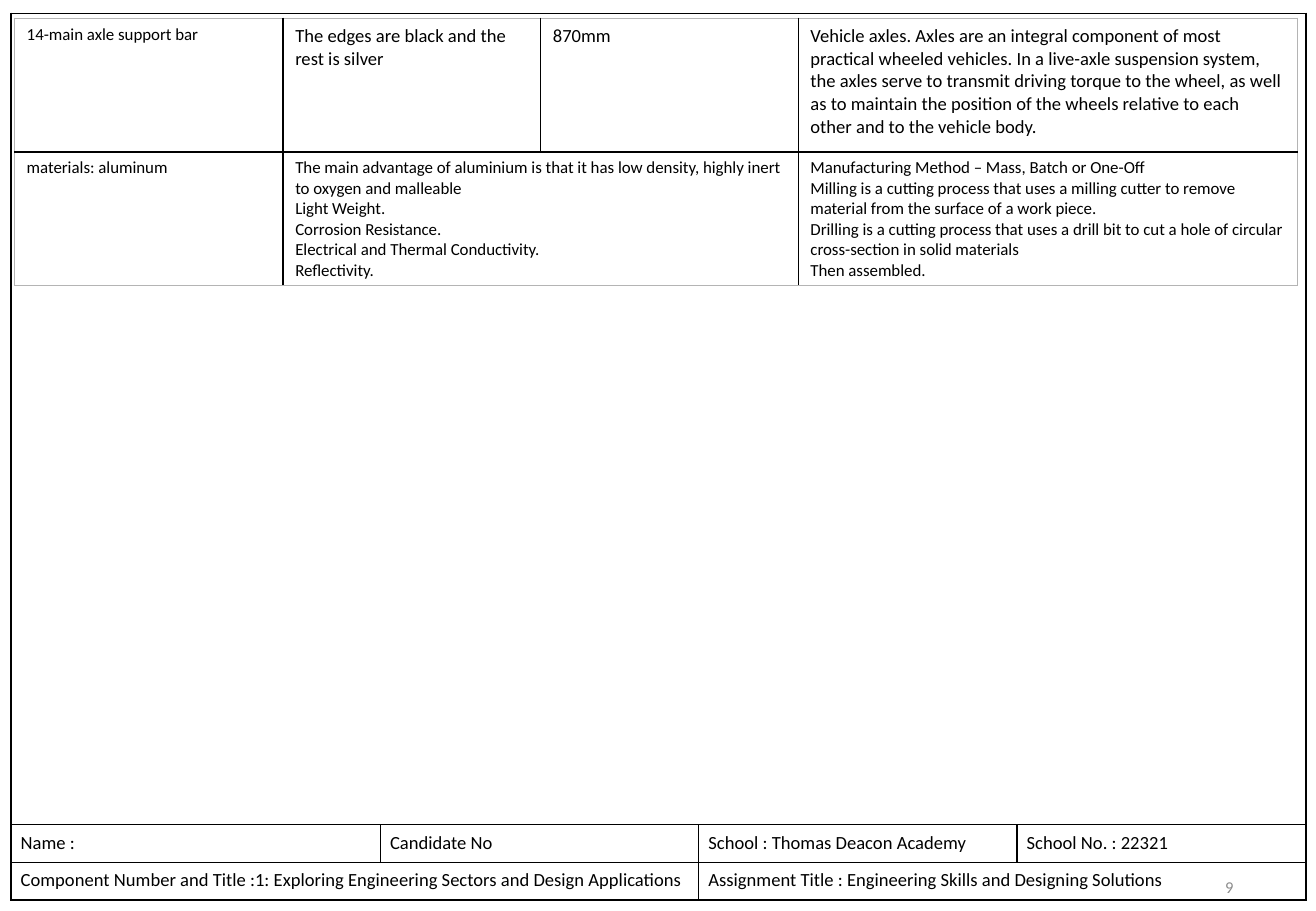
import lxml.etree
import pptx
import pptx.dml.color
import pptx.enum.text
import pptx.oxml.ns
import pptx.util

WIDTH, HEIGHT = 10.83, 7.5
BLACK, GREY, PAGE_GREY, WHITE = "000000", "B4B4B4", "8C8C8C", "FFFFFF"
MIDDLE = pptx.enum.text.MSO_ANCHOR.MIDDLE
TOP = pptx.enum.text.MSO_ANCHOR.TOP
RIGHT = pptx.enum.text.PP_ALIGN.RIGHT

FRAME_BOX = (0.09, 0.11, 10.65, 7.31)
FRAME_COLUMNS = (3.04, 2.62, 2.62, 2.38)
FRAME_ROWS = (6.68, 0.31, 0.31)
FRAME_CELLS = {
    (1, 0): ("Name :", 11, MIDDLE),
    (1, 1): ("Candidate No", 11, MIDDLE),
    (1, 2): ("School : Thomas Deacon Academy", 11, MIDDLE),
    (1, 3): ("School No. : 22321", 11, MIDDLE),
    (2, 0): ("Component Number and Title :1: Exploring Engineering Sectors "
             "and Design Applications", 11, TOP),
    (2, 2): ("Assignment Title : Engineering Skills and Designing Solutions", 11, TOP),
}
FRAME_SPANS = (((0, 0), (0, 3)), ((2, 0), (2, 1)), ((2, 2), (2, 3)))

PART_BOX = (0.12, 0.15, 10.57, 2.2)
PART_COLUMNS = (2.21, 2.12, 2.12, 4.11)
PART_ROWS = (1.1, 1.1)
PART_CELLS = {
    (0, 0): ("14-main axle support bar", 10, TOP),
    (0, 1): ("The edges are black and the rest is silver", 11, TOP),
    (0, 2): ("870mm", 11, TOP),
    (0, 3): ("Vehicle axles. Axles are an integral component of most practical wheeled "
             "vehicles. In a live-axle suspension system, the axles serve to transmit "
             "driving torque to the wheel, as well as to maintain the position of the "
             "wheels relative to each other and to the vehicle body.", 11, TOP),
    (1, 0): ("materials: aluminum", 10, TOP),
    (1, 1): ("The main advantage of aluminium is that it has low density, highly inert "
             "to oxygen and malleable\nLight Weight.\nCorrosion Resistance.\n"
             "Electrical and Thermal Conductivity.\nReflectivity.", 10, TOP),
    (1, 3): ("Manufacturing Method – Mass, Batch or One-Off\n"
             "Milling is a cutting process that uses a milling cutter to remove material "
             "from the surface of a work piece.\n"
             "Drilling is a cutting process that uses a drill bit to cut a hole of "
             "circular cross-section in solid materials\nThen assembled.", 10, TOP),
}
PART_SPANS = (((1, 1), (1, 2)),)


def color(code):
    """Turn a hex string into a colour."""
    return pptx.dml.color.RGBColor.from_string(code)


def inches(values):
    """Turn numbers into lengths in inches."""
    return [pptx.util.Inches(value) for value in values]


def write(frame, text, size=11, ink=BLACK, align=None):
    """Write one paragraph per line of text into a text frame."""
    frame.word_wrap = True
    frame.text = text
    for paragraph in frame.paragraphs:
        paragraph.alignment = align
        for run in paragraph.runs:
            run.font.name = "Calibri"
            run.font.size = pptx.util.Pt(size)
            run.font.color.rgb = color(ink)


def border(cell, side, ink):
    """Draw a one point line on one side of a cell."""
    qn = pptx.oxml.ns.qn
    properties = cell._tc.get_or_add_tcPr()
    line = lxml.etree.SubElement(properties, qn(f"a:ln{side}"), w="12700")
    fill = lxml.etree.SubElement(line, qn("a:solidFill"))
    lxml.etree.SubElement(fill, qn("a:srgbClr"), val=ink)


def ruled_table(slide, box, columns, rows, cells, spans, edge, fill, inset):
    """Place a table with black inner rules and the given edge colour."""
    table = slide.shapes.add_table(len(rows), len(columns), *inches(box)).table
    table.first_row = table.horz_banding = False
    for column, width in zip(table.columns, inches(columns)):
        column.width = width
    for row, height in zip(table.rows, inches(rows)):
        row.height = height
    for r in range(len(rows)):
        for c in range(len(columns)):
            cell = table.cell(r, c)
            outer = {"L": c == 0, "R": c == len(columns) - 1,
                     "T": r == 0, "B": r == len(rows) - 1}
            for side, is_outer in outer.items():
                border(cell, side, edge if is_outer else BLACK)
            if fill:
                cell.fill.solid()
                cell.fill.fore_color.rgb = color(fill)
            else:
                cell.fill.background()
            cell.margin_left = cell.margin_right = pptx.util.Inches(inset)
    for first, last in spans:
        table.cell(*first).merge(table.cell(*last))
    for place, (text, size, anchor) in cells.items():
        cell = table.cell(*place)
        cell.vertical_anchor = anchor
        write(cell.text_frame, text, size=size)


def page_number(slide, box):
    """Place the page number at the right of its box."""
    frame = slide.shapes.add_textbox(*inches(box)).text_frame
    frame.vertical_anchor = MIDDLE
    write(frame, "9", size=9.8, ink=PAGE_GREY, align=RIGHT)


def main():
    """Build and save the slide."""
    deck = pptx.Presentation()
    deck.slide_width, deck.slide_height = inches((WIDTH, HEIGHT))
    slide = deck.slides.add_slide(deck.slide_layouts[6])
    ruled_table(slide, FRAME_BOX, FRAME_COLUMNS, FRAME_ROWS, FRAME_CELLS,
                FRAME_SPANS, edge=BLACK, fill=WHITE, inset=0.08)
    page_number(slide, (7.81, 7.1, 2.44, 0.4))
    ruled_table(slide, PART_BOX, PART_COLUMNS, PART_ROWS, PART_CELLS,
                PART_SPANS, edge=GREY, fill=None, inset=0.1)
    deck.save("out.pptx")


if __name__ == "__main__":
    main()
